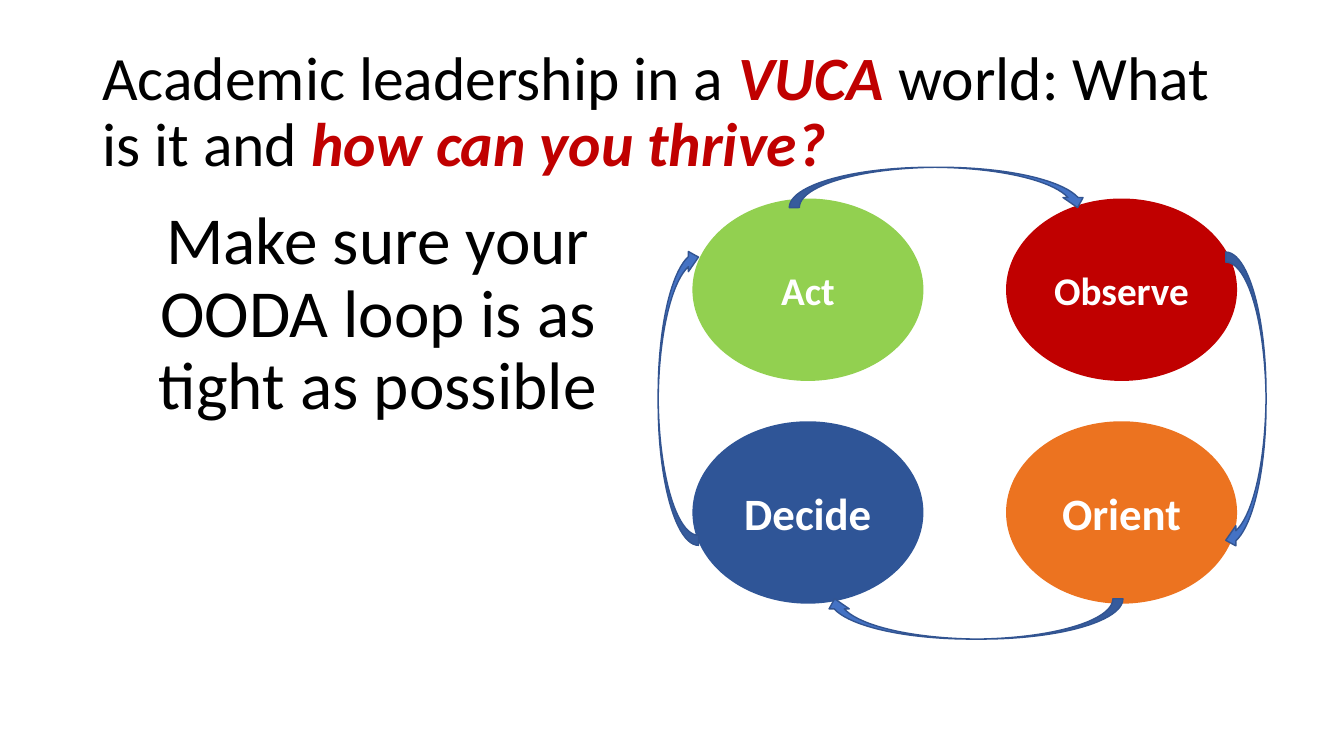
from pptx import Presentation
from pptx.dml.color import RGBColor
from pptx.enum.shapes import MSO_SHAPE
from pptx.enum.text import MSO_ANCHOR, PP_ALIGN
from pptx.util import Pt

OVAL = MSO_SHAPE.OVAL
ARROW = MSO_SHAPE.CURVED_DOWN_ARROW
MIDDLE, TOP = MSO_ANCHOR.MIDDLE, MSO_ANCHOR.TOP
LEFT, CENTER = PP_ALIGN.LEFT, PP_ALIGN.CENTER

# Content
BLACK, RED, WHITE = "000000", "C00000", "FFFFFF"
TITLE = [  # text, stressed
    ("Academic leadership in a ", False),
    ("VUCA ", True),
    ("world: What is it and ", False),
    ("how can you thrive?", True),
]
ADVICE = "Make sure your OODA loop is as tight as possible"
STEPS = [  # name, column, row, fill, text size
    ("Act", 0, 0, "92D050", 28),
    ("Observe", 1, 0, RED, 28),
    ("Orient", 1, 1, "EC7320", 32),
    ("Decide", 0, 1, "2F5597", 32),
]
ARROWS = [  # left, top, turn
    (563.8, 119.5, 0),
    (783.4, 272.2, 90),
    (378, 268.6, 270),
    (589, 427.7, 180),
]

# Layout, in points
GRID_X, GRID_Y = 494.6, 141.8
OVAL_W, OVAL_H = 165, 130.3
STEP_X, STEP_Y = 224, 159.1
ARROW_W, ARROW_H = 213.1, 28.8

deck = Presentation()
deck.slide_width, deck.slide_height = Pt(960), Pt(540)
slide = deck.slides.add_slide(deck.slide_layouts[6])


def tint(hue):
    return RGBColor.from_string(hue)


def style(run, size, hue, bold=False, italic=False):
    font = run.font
    font.name, font.size = "Calibri", Pt(size)
    font.bold, font.italic = bold, italic
    font.color.rgb = tint(hue)


def add_box(x, y, w, h, anchor, align):
    box = slide.shapes.add_textbox(Pt(x), Pt(y), Pt(w), Pt(h))
    frame = box.text_frame
    frame.word_wrap = True
    frame.vertical_anchor = anchor
    para = frame.paragraphs[0]
    para.alignment = align
    para.line_spacing = 0.9
    return para


def add_form(kind, x, y, w, h, fill):
    form = slide.shapes.add_shape(kind, Pt(x), Pt(y), Pt(w), Pt(h))
    form.shadow.inherit = False
    form.fill.solid()
    form.fill.fore_color.rgb = tint(fill)
    return form


# Title
para = add_box(66, 28.8, 828, 104.4, MIDDLE, LEFT)
for text, stress in TITLE:
    run = para.add_run()
    run.text = text
    style(run, 44, RED if stress else BLACK, stress, stress)

# Advice
para = add_box(66, 144, 408, 342.7, TOP, CENTER)
para.space_before = Pt(10)
para.text = ADVICE
style(para.runs[0], 48, BLACK)

# Steps of the loop
for name, col, row, fill, size in STEPS:
    oval = add_form(OVAL, GRID_X + col * STEP_X, GRID_Y + row * STEP_Y,
                    OVAL_W, OVAL_H, fill)
    oval.line.fill.background()
    oval.text_frame.text = name
    oval.text_frame.vertical_anchor = MIDDLE
    para = oval.text_frame.paragraphs[0]
    para.alignment = CENTER
    style(para.runs[0], size, WHITE, bold=True)

# Arrows around the loop
for x, y, turn in ARROWS:
    arrow = add_form(ARROW, x, y, ARROW_W, ARROW_H, "4472C4")
    arrow.rotation = turn
    arrow.line.color.rgb = tint("325491")
    arrow.line.width = Pt(1)

deck.save("out.pptx")
